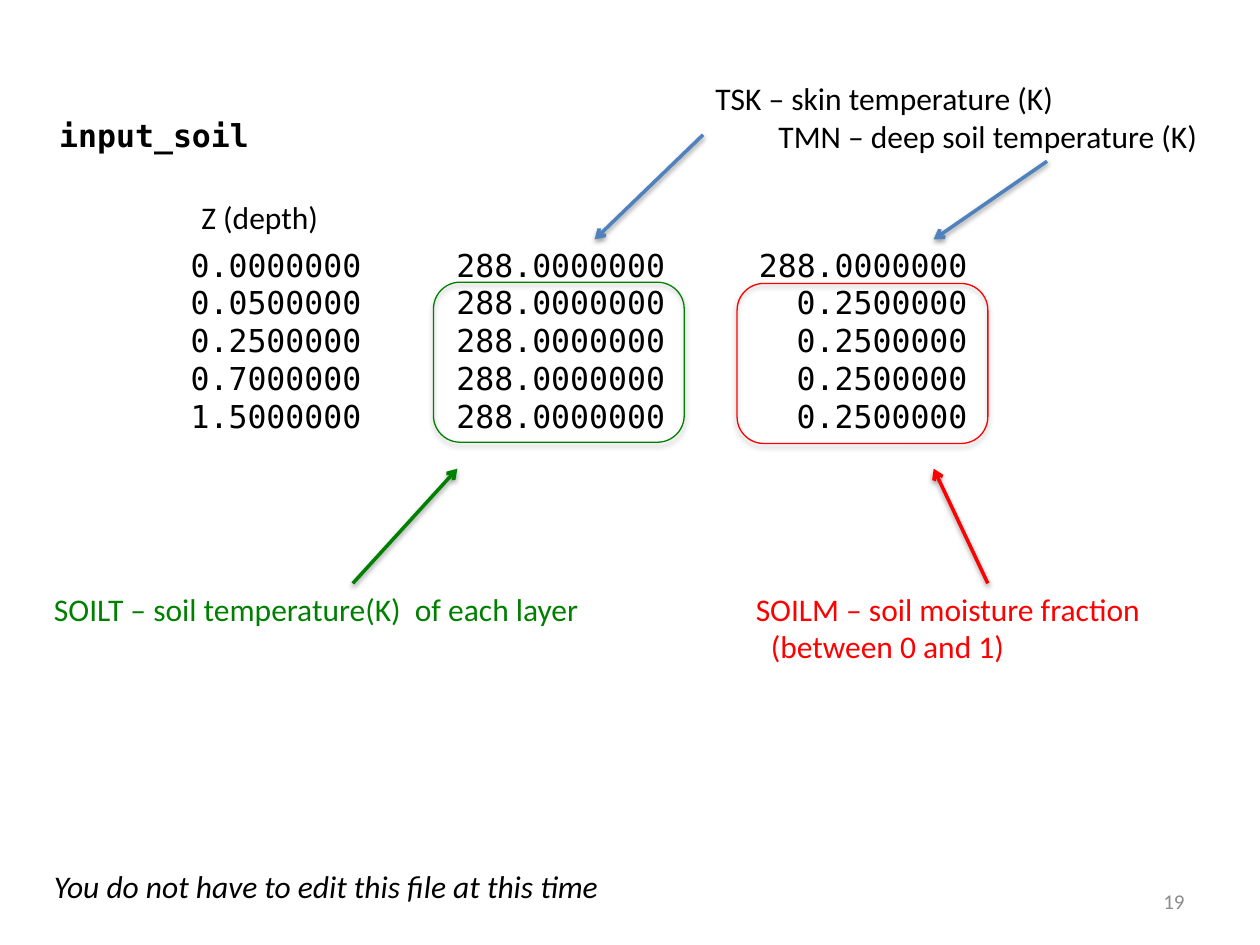
from lxml.etree import SubElement
from pptx import Presentation
from pptx.dml.color import RGBColor
from pptx.enum.shapes import MSO_CONNECTOR, MSO_SHAPE
from pptx.enum.text import MSO_ANCHOR, MSO_AUTO_SIZE, PP_ALIGN
from pptx.oxml.ns import qn
from pptx.util import Inches, Pt

COLORS = {
    "text": "000000",
    "surface": "4F81BD",
    "temperature": "008000",
    "moisture": "FF0000",
    "number": "8C8C8C",
}
MONO = "DejaVu Sans Mono"
SOIL_ROWS = [
    ("0.0000000", "288.0000000", "288.0000000"),
    ("0.0500000", "288.0000000", "0.2500000"),
    ("0.2500000", "288.0000000", "0.2500000"),
    ("0.7000000", "288.0000000", "0.2500000"),
    ("1.5000000", "288.0000000", "0.2500000"),
]
COLUMN_ENDS = (2.41, 4.82, 7.22)


def rgb(name):
    return RGBColor.from_string(COLORS[name])


def write(holder, lines, left, top, width, height, *, font="Calibri", size=18,
          color="text", bold=False, italic=False, align=PP_ALIGN.LEFT,
          anchor=MSO_ANCHOR.TOP, wrap=False, indents=()):
    """Place a text holder and fill it, one paragraph per line."""
    holder.left, holder.top = Inches(left), Inches(top)
    holder.width, holder.height = Inches(width), Inches(height)
    frame = holder.text_frame
    frame.text = "\n".join(lines)
    frame.word_wrap = wrap
    frame.auto_size = MSO_AUTO_SIZE.NONE
    frame.vertical_anchor = anchor
    for paragraph in frame.paragraphs:
        paragraph.alignment = align
        for run in paragraph.runs:
            run.font.name, run.font.size = font, Pt(size)
            run.font.bold, run.font.italic = bold, italic
            run.font.color.rgb = rgb(color)
    for paragraph, indent in zip(frame.paragraphs, indents):
        paragraph._p.get_or_add_pPr().set("marL", str(Inches(indent)))
    return frame


def label(slide, lines, *box, **style):
    return write(slide.shapes.add_textbox(0, 0, 0, 0), lines, *box, **style)


def add_shadow(shape, opacity, distance):
    effects = SubElement(shape._element.spPr, qn("a:effectLst"))
    shadow = SubElement(effects, qn("a:outerShdw"), blurRad=str(Pt(3.1)),
                        dist=str(Pt(distance)), dir="5400000", rotWithShape="0")
    black = SubElement(shadow, qn("a:srgbClr"), val=COLORS["text"])
    SubElement(black, qn("a:alpha"), val=str(opacity * 1000))


def arrow(slide, start, end, color):
    pointer = slide.shapes.add_connector(
        MSO_CONNECTOR.STRAIGHT, *map(Inches, start + end))
    pointer.line.color.rgb = rgb(color)
    pointer.line.width = Pt(2)
    SubElement(pointer.line._get_or_add_ln(), qn("a:tailEnd"), type="arrow")
    add_shadow(pointer, 38, 1.6)


def outline(slide, left, top, color):
    frame = slide.shapes.add_shape(
        MSO_SHAPE.ROUNDED_RECTANGLE, *map(Inches, (left, top, 1.99, 1.27)))
    frame.fill.background()
    frame.line.color.rgb = rgb(color)
    frame.line.width = Pt(0.75)
    add_shadow(frame, 35, 1.8)


def soil_columns(slide, left, top):
    """Values in right-aligned columns, with the layer blocks outlined."""
    label(slide, ["Z (depth)"], left + 1.14, top - 0.38, 1.14, 0.4)
    lines = ["\t" + "\t".join(row) for row in SOIL_ROWS]
    values = label(slide, lines, left, top, 7.47, 1.62, font=MONO, wrap=True)
    for paragraph in values.paragraphs:
        tabs = SubElement(paragraph._p.get_or_add_pPr(), qn("a:tabLst"))
        for end in COLUMN_ENDS:
            SubElement(tabs, qn("a:tab"), pos=str(Inches(end)), algn="r")
    outline(slide, left + 3.08, top + 0.34, "temperature")
    outline(slide, left + 5.49, top + 0.35, "moisture")


def surface_notes(slide, left, top):
    label(slide, ["TSK – skin temperature (K)", "TMN – deep soil temperature (K)"],
          left, top, 4.08, 0.71, wrap=True, indents=(0, 0.5))
    arrow(slide, (left, top + 0.49), (left - 0.86, top + 1.32), "surface")
    arrow(slide, (left + 2.73, top + 0.7), (left + 1.83, top + 1.32), "surface")


def layer_notes(slide, left, top):
    label(slide, ["SOILT – soil temperature(K)  of each layer"],
          left, top, 4.45, 0.4, color="temperature")
    label(slide, ["SOILM – soil moisture fraction", "(between 0 and 1)"],
          left + 5.57, top, 3.6, 0.71, color="moisture", wrap=True,
          indents=(0, 0.12))
    tip = top - 0.91
    arrow(slide, (left + 2.47, top), (left + 3.3, tip), "temperature")
    arrow(slide, (left + 7.51, top), (left + 7.08, tip), "moisture")


def footer(slide, left, top):
    label(slide, ["You do not have to edit this file at this time"],
          left, top, 4.61, 0.4, italic=True)
    label(slide, ["19"], left + 6.84, top + 0.12, 2.33, 0.4, size=12,
          color="number", align=PP_ALIGN.RIGHT, anchor=MSO_ANCHOR.MIDDLE)


def main():
    deck = Presentation()
    deck.slide_width, deck.slide_height = Inches(10), Inches(7.5)
    slide = deck.slides.add_slide(deck.slide_layouts[5])
    write(slide.shapes.title, ["input_soil"], 0.37, 0.87, 1.72, 0.4,
          font=MONO, bold=True)
    soil_columns(slide, 0.36, 1.9)
    surface_notes(slide, 5.58, 0.58)
    layer_notes(slide, 0.33, 4.63)
    footer(slide, 0.33, 6.83)
    deck.save("out.pptx")


if __name__ == "__main__":
    main()
